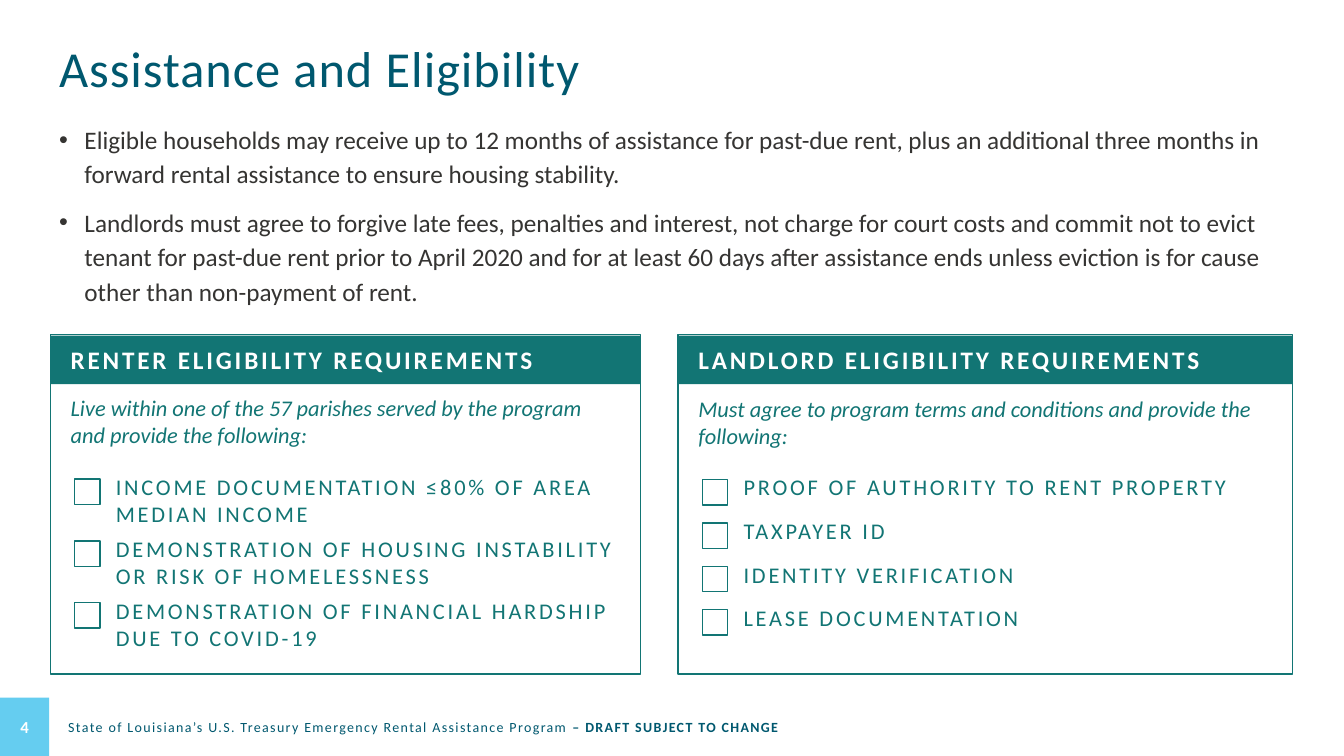
"""Build the Assistance and Eligibility slide."""
from lxml.etree import SubElement
from pptx import Presentation
from pptx.dml.color import RGBColor
from pptx.enum.shapes import MSO_SHAPE
from pptx.enum.text import MSO_ANCHOR, PP_ALIGN
from pptx.oxml.ns import qn
from pptx.util import Cm, Pt

COLORS = {"navy": "00586F", "teal": "127574", "sky": "65CDF0", "ink": "353432", "white": "FFFFFF"}
PANEL_TOP, PANEL_HEIGHT = 8.43, 8.56
HEADER_TOP, HEADER_HEIGHT = 8.46, 1.22
CHECKBOX_SIZE = 0.64
FOOTER_TOP, FOOTER_HEIGHT = 17.58, 1.47


def apply_formats(target, formats):
    """Set each named attribute on the target."""
    for name, value in formats.items():
        setattr(target, name, value)


def add_run(paragraph, wording, size, color, spacing=0, **formats):
    """Add a run with its font and letter spacing in points."""
    run = paragraph.add_run()
    run.text = wording
    apply_formats(run.font, {"name": "Calibri", "size": Pt(size), **formats})
    run.font.color.rgb = RGBColor.from_string(COLORS[color])
    if spacing:
        run.font._element.set("spc", str(round(spacing * 100)))


def add_paragraphs(frame, lines, font, **formats):
    """Fill a text frame with equally formatted paragraphs."""
    for index, line in enumerate(lines):
        paragraph = frame.paragraphs[0] if index == 0 else frame.add_paragraph()
        apply_formats(paragraph, formats)
        add_run(paragraph, line, **font)
    return frame.paragraphs


def add_text(slide, left, top, width, height, **formats):
    """Add a wrapping text box and return its frame."""
    frame = slide.shapes.add_textbox(Cm(left), Cm(top), Cm(width), Cm(height)).text_frame
    apply_formats(frame, {"word_wrap": True, **formats})
    return frame


def add_rectangle(slide, left, top, width, height, fill=None, line=None):
    """Add a flat rectangle with optional fill and outline."""
    rectangle = slide.shapes.add_shape(
        MSO_SHAPE.RECTANGLE, Cm(left), Cm(top), Cm(width), Cm(height))
    rectangle.shadow.inherit = False
    if fill:
        rectangle.fill.solid()
        rectangle.fill.fore_color.rgb = RGBColor.from_string(COLORS[fill])
    else:
        rectangle.fill.background()
    if line:
        rectangle.line.color.rgb = RGBColor.from_string(COLORS[line])
        rectangle.line.width = Pt(1)
    else:
        rectangle.line.fill.background()
    return rectangle


def add_bullet(paragraph):
    """Give a paragraph a hanging round bullet."""
    properties = paragraph._p.get_or_add_pPr()
    properties.set("marL", str(Cm(0.64)))
    properties.set("indent", str(-Cm(0.64)))
    SubElement(properties, qn("a:buFont")).set("typeface", "Arial")
    SubElement(properties, qn("a:buChar")).set("char", "•")


def add_panel(slide, left, width, heading, intro, items, first_box, box_step, gap):
    """Add a framed requirements panel with a checklist."""
    for index in range(len(items)):
        add_rectangle(slide, left + 0.61, first_box + index * box_step,
                      CHECKBOX_SIZE, CHECKBOX_SIZE, "white", "teal")
    intro_frame = add_text(slide, left, first_box - 2.39, width, 1.88,
                           margin_left=Cm(0.51), margin_right=Cm(0.51),
                           margin_top=Cm(0.25), margin_bottom=Cm(0.25))
    add_paragraphs(intro_frame, [intro], {"size": 16, "color": "teal", "italic": True})
    add_rectangle(slide, left, PANEL_TOP, width, PANEL_HEIGHT, line="teal")
    header = add_rectangle(slide, left, HEADER_TOP, width, HEADER_HEIGHT, "teal").text_frame
    apply_formats(header, {"margin_left": Cm(0.51), "word_wrap": True,
                           "vertical_anchor": MSO_ANCHOR.MIDDLE})
    add_paragraphs(header, [heading], {"size": 18, "color": "white", "spacing": 2, "bold": True},
                   alignment=PP_ALIGN.LEFT)
    checklist = add_text(slide, left + 1.4, first_box - 0.28, width - 1.4, 4.6)
    add_paragraphs(checklist, items, {"size": 16, "color": "teal", "spacing": 2},
                   space_after=Pt(gap))


def add_footer(slide):
    """Add the footer line and page number badge."""
    footer = add_text(slide, 1.47, FOOTER_TOP, 19.35, FOOTER_HEIGHT,
                      vertical_anchor=MSO_ANCHOR.MIDDLE)
    program = footer.paragraphs[0]
    add_run(program, "State of Louisiana’s U.S. Treasury Emergency Rental Assistance Program",
            10, "navy", 1)
    add_run(program, " – DRAFT SUBJECT TO CHANGE", 10, "navy", 1, bold=True)
    badge = add_rectangle(slide, 0, FOOTER_TOP, 1.24, FOOTER_HEIGHT, "sky").text_frame
    badge.vertical_anchor = MSO_ANCHOR.MIDDLE
    add_paragraphs(badge, ["4"], {"size": 12, "color": "white", "bold": True},
                   alignment=PP_ALIGN.CENTER)


def add_overview(slide):
    """Add the title and the two program bullets."""
    title = add_text(slide, 1.24, 0.99, 31.34, 1.65)
    add_paragraphs(title, ["Assistance and Eligibility"],
                   {"size": 36, "color": "navy", "spacing": 0.7}, line_spacing=0.9)
    terms = add_paragraphs(add_text(slide, 1.24, 2.9, 31.34, 5.3), [
        "Eligible households may receive up to 12 months of assistance for past-due rent, "
        "plus an additional three months in forward rental assistance to ensure housing stability.",
        "Landlords must agree to forgive late fees, penalties and interest, not charge for court "
        "costs and commit not to evict tenant for past-due rent prior to April 2020 and for at "
        "least 60 days after assistance ends unless eviction is for cause other than non-payment "
        "of rent.",
    ], {"size": 18, "color": "ink"})
    for index, term in enumerate(terms):
        add_bullet(term)
        apply_formats(term, {"line_spacing": 1.14, "space_before": Pt(10 if index else 0)})


def main():
    """Build and save the slide."""
    presentation = Presentation()
    apply_formats(presentation, {"slide_width": Cm(33.87), "slide_height": Cm(19.05)})
    slide = presentation.slides.add_slide(presentation.slide_layouts[6])
    add_footer(slide)
    add_overview(slide)
    add_panel(slide, 1.27, 14.88, "RENTER ELIGIBILITY REQUIREMENTS",
              "Live within one of the 57 parishes served by the program and provide the following:",
              ["INCOME DOCUMENTATION ≤80% OF AREA MEDIAN INCOME",
               "DEMONSTRATION OF HOUSING INSTABILITY OR RISK OF HOMELESSNESS",
               "DEMONSTRATION OF FINANCIAL HARDSHIP DUE TO COVID-19"],
              first_box=12.07, box_step=1.56, gap=6)
    add_panel(slide, 17.09, 15.49, "LANDLORD ELIGIBILITY REQUIREMENTS",
              "Must agree to program terms and conditions and provide the following:",
              ["PROOF OF AUTHORITY TO RENT PROPERTY", "TAXPAYER ID",
               "IDENTITY VERIFICATION", "LEASE DOCUMENTATION"],
              first_box=12.09, box_step=1.09, gap=12)
    presentation.save("out.pptx")


if __name__ == "__main__":
    main()
